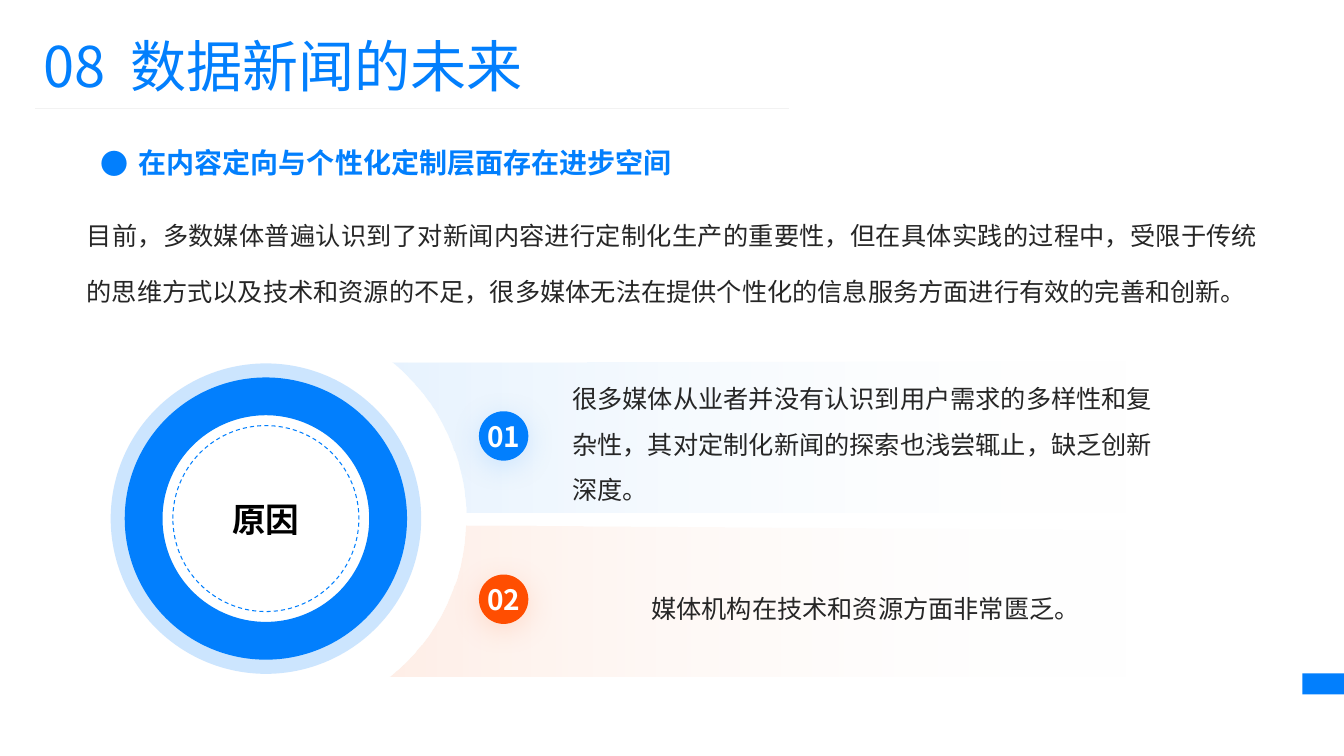
import math

import pptx
import pptx.util
from lxml import etree
from pptx.dml.color import RGBColor
from pptx.enum.shapes import MSO_CONNECTOR, MSO_SHAPE
from pptx.enum.dml import MSO_LINE
from pptx.enum.text import MSO_ANCHOR, PP_ALIGN
from pptx.oxml.ns import qn

COLORS = {"blue": "027FFD", "orange": "FF4E01", "white": "FFFFFF", "black": "000000",
          "ink": "262626", "rule": "F2F2F2", "blue_glow": "9ACCFE", "orange_glow": "FFB899"}
FONT = "Noto Sans CJK SC"

TITLE_NUMBER, TITLE = "08", "数据新闻的未来"
HEADING = "在内容定向与个性化定制层面存在进步空间"
BODY = ("目前，多数媒体普遍认识到了对新闻内容进行定制化生产的重要性，但在具体实践的过程中，"
        "受限于传统的思维方式以及技术和资源的不足，很多媒体无法在提供个性化的信息服务方面进行有效的完善和创新。")
DIAL_LABEL = "原因"
REASONS = [
    {"number": "01", "color": "blue", "glow": "blue_glow", "align": PP_ALIGN.LEFT,
     "text": "很多媒体从业者并没有认识到用户需求的多样性和复杂性，其对定制化新闻的探索也浅尝辄止，缺乏创新深度。",
     "arc_rows": (14.4, 20.32), "right_rows": (14.32, 20.32), "badge_row": 16.32},
    {"number": "02", "color": "orange", "glow": "orange_glow", "align": PP_ALIGN.CENTER,
     "text": "媒体机构在技术和资源方面非常匮乏。",
     "arc_rows": (20.84, 26.84), "right_rows": (21.04, 26.84), "badge_row": 22.8},
]

# The slide is a grid of square cells, 30 rows high.
SLIDE_WIDTH, SLIDE_HEIGHT = pptx.util.Inches(13.33), pptx.util.Inches(7.5)
CELL = SLIDE_HEIGHT / 30
TITLE_BOX = (1.32, 1.04, 30.72, 3.08)
HEADING_BOX = (1.4, 5.56, 27.84, 1.56)
BODY_BOX = (3.44, 7.72, 46.48, 5.04)
EDGE_MARK = (51.67, 26.72, 1.65, 0.84)
RULE_ROW, RULE_COLUMNS = 4.32, (1.4, 31.32)
DIAL_CENTER = (10.55, 20.58)
DASHED_RADIUS, PANEL_ARC_RADIUS = 3.69, 7.96
RINGS = [(6.16, 1.65, 20), (5.6, 1.5, 100)]  # radius, thickness, opacity
PANEL_RIGHT, PANEL_TEXT_INSET = 46.46, 7.14
BADGE_COLUMN, BADGE_SIZE = 19, 1.96
ARC_STEPS = 40


def cells(*counts):
    return [pptx.util.Emu(round(count * CELL)) for count in counts]


def color(name):
    return RGBColor.from_string(COLORS[name])


def color_element(parent, name, opacity):
    element = etree.SubElement(parent, qn("a:srgbClr"), val=COLORS[name])
    etree.SubElement(element, qn("a:alpha"), val=str(opacity * 1000))


def add_run(paragraph, text, size, color_name, bold=False):
    run = paragraph.add_run()
    run.text = text
    run.font.size = pptx.util.Pt(size)
    run.font.name = FONT
    run.font.bold = bold
    run.font.color.rgb = color(color_name)
    etree.SubElement(run.font._element, qn("a:ea"), typeface=FONT)
    return run


def prepare_text(shape, align, anchor, insets=(0, 0, 0, 0), wrap=True):
    """Set up the text frame and return its first paragraph."""
    frame = shape.text_frame
    frame.word_wrap = wrap
    frame.vertical_anchor = anchor
    (frame.margin_left, frame.margin_top,
     frame.margin_right, frame.margin_bottom) = cells(*insets)
    paragraph = frame.paragraphs[0]
    paragraph.alignment = align
    return paragraph


def add_plain_shape(slide, kind, box, fill):
    shape = slide.shapes.add_shape(kind, *cells(*box))
    shape.shadow.inherit = False
    shape.line.fill.background()
    shape.fill.solid()
    shape.fill.fore_color.rgb = color(fill)
    return shape


def circle_box(radius):
    return DIAL_CENTER[0] - radius, DIAL_CENTER[1] - radius, 2 * radius, 2 * radius


def add_header(slide):
    add_plain_shape(slide, MSO_SHAPE.RECTANGLE, EDGE_MARK, "blue")
    title = slide.shapes.add_textbox(*cells(*TITLE_BOX))
    paragraph = prepare_text(title, PP_ALIGN.LEFT, MSO_ANCHOR.TOP, (0.4, 0.2, 0.4, 0.2))
    add_run(paragraph, TITLE_NUMBER, 40, "blue")
    gap = add_run(paragraph, " ", 40, "blue")
    gap.font._element.set("spc", "900")
    add_run(paragraph, TITLE, 40, "blue")

    start, end = RULE_COLUMNS
    rule = slide.shapes.add_connector(MSO_CONNECTOR.STRAIGHT,
                                      *cells(start, RULE_ROW, end, RULE_ROW))
    rule.line.color.rgb = color("rule")
    rule.line.width = pptx.util.Pt(0.5)
    etree.SubElement(rule._element.spPr, qn("a:effectLst"))


def add_introduction(slide):
    heading = slide.shapes.add_textbox(*cells(*HEADING_BOX))
    paragraph = prepare_text(heading, PP_ALIGN.CENTER, MSO_ANCHOR.BOTTOM)
    properties = paragraph._p.get_or_add_pPr()
    indent = pptx.util.Inches(0.38)
    properties.set("marL", str(indent))
    properties.set("indent", str(-indent))
    etree.SubElement(properties, qn("a:buFont"), typeface=FONT)
    etree.SubElement(properties, qn("a:buChar"), char="●")
    add_run(paragraph, HEADING, 20, "blue", bold=True)

    body = slide.shapes.add_textbox(*cells(*BODY_BOX))
    paragraph = prepare_text(body, PP_ALIGN.JUSTIFY, MSO_ANCHOR.TOP)
    paragraph.line_spacing = pptx.util.Pt(40)
    add_run(paragraph, BODY, 18, "ink")


def add_panel(slide, reason):
    """Draw a faded panel whose left side follows a circle around the dial."""
    center_x, center_y = DIAL_CENTER
    first, last = [math.asin((row - center_y) / PANEL_ARC_RADIUS)
                   for row in reason["arc_rows"]]
    angles = [first + (last - first) * step / ARC_STEPS for step in range(ARC_STEPS + 1)]
    points = [(center_x + PANEL_ARC_RADIUS * math.cos(angle),
               center_y + PANEL_ARC_RADIUS * math.sin(angle)) for angle in angles]
    top, bottom = reason["right_rows"]
    points += [(PANEL_RIGHT, bottom), (PANEL_RIGHT, top)]
    outline = [cells(*point) for point in points]
    builder = slide.shapes.build_freeform(*outline[0])
    builder.add_line_segments(outline[1:], close=True)
    panel = builder.convert_to_shape()
    panel.shadow.inherit = False
    panel.line.fill.background()

    gradient = etree.Element(qn("a:gradFill"), rotWithShape="1")
    stops = etree.SubElement(gradient, qn("a:gsLst"))
    for position, name, opacity in ((0, "white", 0), (100, reason["color"], 10)):
        stop = etree.SubElement(stops, qn("a:gs"), pos=str(position * 1000))
        color_element(stop, name, opacity)
    etree.SubElement(gradient, qn("a:lin"), ang=str(180 * 60000), scaled="0")
    panel._element.spPr.find(qn("a:custGeom")).addnext(gradient)

    paragraph = prepare_text(panel, reason["align"], MSO_ANCHOR.MIDDLE,
                             (PANEL_TEXT_INSET, 0.2, 0.4, 0.2))
    paragraph.line_spacing = 1.5
    add_run(paragraph, reason["text"], 18, "ink")


def add_dial(slide):
    dashed = add_plain_shape(slide, MSO_SHAPE.OVAL, circle_box(DASHED_RADIUS), "white")
    dashed.fill.background()
    dashed.line.color.rgb = color("blue")
    dashed.line.width = pptx.util.Pt(0.75)
    dashed.line.dash_style = MSO_LINE.DASH
    paragraph = prepare_text(dashed, PP_ALIGN.CENTER, MSO_ANCHOR.MIDDLE)
    add_run(paragraph, DIAL_LABEL, 24, "black", bold=True)

    for radius, thickness, opacity in RINGS:
        ring = add_plain_shape(slide, MSO_SHAPE.DONUT, circle_box(radius), "blue")
        ring.adjustments[0] = thickness / (2 * radius)
        fill = ring._element.spPr.find(qn("a:solidFill"))
        fill.clear()
        color_element(fill, "blue", opacity)


def add_badge(slide, reason):
    box = (BADGE_COLUMN, reason["badge_row"], BADGE_SIZE, BADGE_SIZE)
    badge = add_plain_shape(slide, MSO_SHAPE.OVAL, box, reason["color"])
    effects = badge._element.spPr.find(qn("a:effectLst"))
    glow = etree.SubElement(effects, qn("a:outerShdw"), blurRad=str(pptx.util.Pt(20)),
                            dist=str(pptx.util.Pt(4)), dir=str(90 * 60000),
                            algn="t", rotWithShape="0")
    color_element(glow, reason["glow"], 40)
    paragraph = prepare_text(badge, PP_ALIGN.CENTER, MSO_ANCHOR.MIDDLE, wrap=False)
    add_run(paragraph, reason["number"], 20, "white", bold=True)


def main():
    presentation = pptx.Presentation()
    presentation.slide_width, presentation.slide_height = SLIDE_WIDTH, SLIDE_HEIGHT
    slide = presentation.slides.add_slide(presentation.slide_layouts[6])
    add_header(slide)
    add_introduction(slide)
    for reason in REASONS:
        add_panel(slide, reason)
    add_dial(slide)
    for reason in REASONS:
        add_badge(slide, reason)
    presentation.save("out.pptx")


if __name__ == "__main__":
    main()
